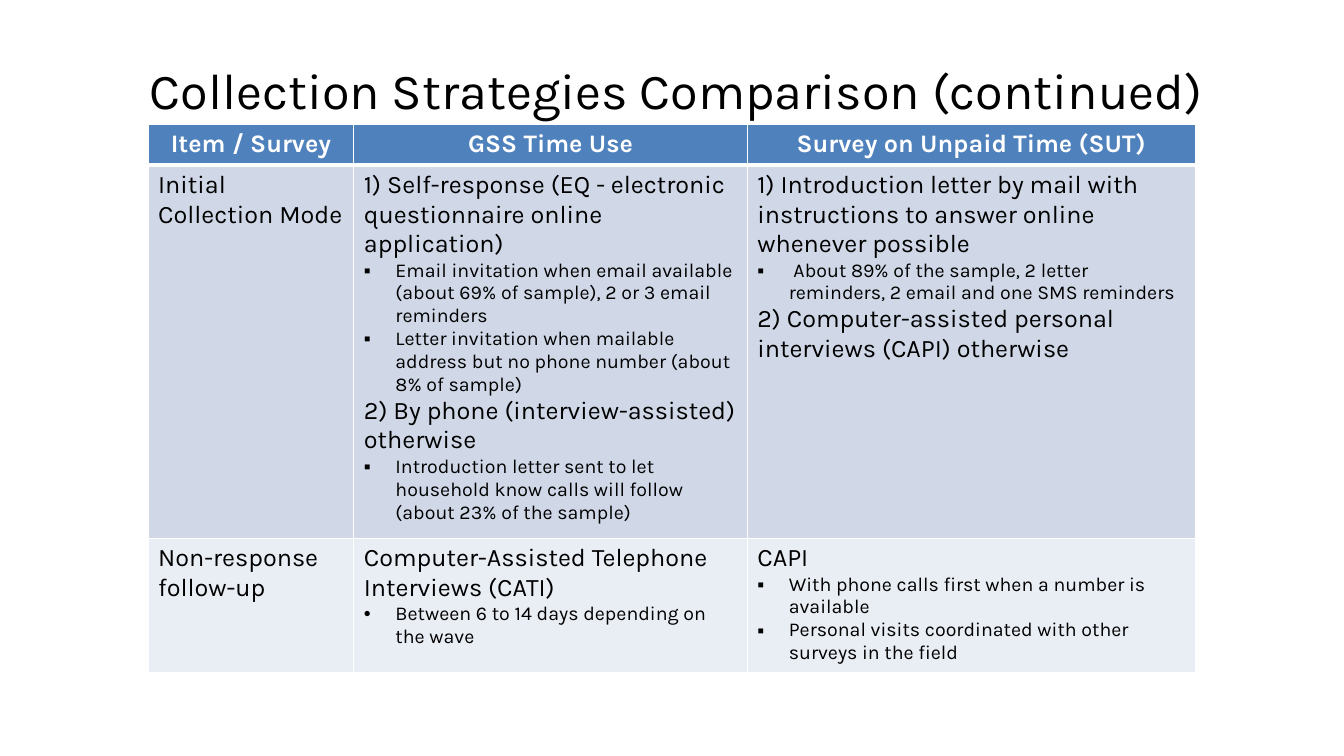
from lxml import etree
from pptx import Presentation
from pptx.dml.color import RGBColor
from pptx.enum import text
from pptx.oxml import ns
from pptx.util import Pt

FONT = "Karla"
BLACK, WHITE = "000000", "FFFFFF"
HEADER_FILL = "4F81BD"
BODY_FILLS = ("D0D8E8", "E9EDF4")
COLUMN_WIDTHS = (147, 281, 320)
ROW_HEIGHTS = (29.5, 259.5, 93.5)
BULLETS = "▪•"
BULLET_INDENT = 22.5

HEADINGS = ["Item / Survey", "GSS Time Use", "Survey on Unpaid Time (SUT)"]
# A line that starts with a bullet character becomes a bulleted paragraph.
STRATEGIES = [
    [
        ["Initial Collection Mode"],
        [
            "1) Self-response (EQ - electronic questionnaire online application)",
            "▪Email invitation when email available (about 69% of sample), 2 or 3 email reminders",
            "▪Letter invitation when mailable address but no phone number (about 8% of sample)",
            "2) By phone (interview-assisted) otherwise",
            "▪Introduction letter sent to let household know calls will follow (about 23% of the sample)",
        ],
        [
            "1) Introduction letter by mail with instructions to answer online whenever possible",
            "▪ About 89% of the sample, 2 letter reminders, 2 email and one SMS reminders",
            "2) Computer-assisted personal interviews (CAPI) otherwise",
        ],
    ],
    [
        ["Non-response follow-up"],
        [
            "Computer-Assisted Telephone Interviews (CATI)",
            "•Between 6 to 14 days depending on the wave",
        ],
        [
            "CAPI",
            "▪With phone calls first when a number is available",
            "▪Personal visits coordinated with other surveys in the field",
        ],
    ],
]


def rgb(color):
    return RGBColor.from_string(color)


def format_runs(paragraph, size, color, bold=False):
    for run in paragraph.runs:
        run.font.name = FONT
        run.font.size = Pt(size)
        run.font.bold = bold
        run.font.color.rgb = rgb(color)


def add_bullet(paragraph, character):
    properties = paragraph._p.get_or_add_pPr()
    indent = Pt(BULLET_INDENT)
    properties.set("marL", str(indent))
    properties.set("indent", str(-indent))
    etree.SubElement(properties, ns.qn("a:buFont"), typeface="Arial")
    etree.SubElement(properties, ns.qn("a:buChar"), char=character)


def set_borders(cell, top, bottom):
    """Draw white borders, 1 pt at the sides and as given above and below."""
    properties = cell._tc.get_or_add_tcPr()
    widths = {"lnL": 1, "lnR": 1, "lnT": top, "lnB": bottom}
    for position, (side, width) in enumerate(widths.items()):
        line = etree.Element(ns.qn(f"a:{side}"), w=str(Pt(width)))
        fill = etree.SubElement(line, ns.qn("a:solidFill"))
        etree.SubElement(fill, ns.qn("a:srgbClr"), val=WHITE)
        properties.insert(position, line)


def fill_cell(cell, lines, fill, header=False):
    cell.fill.solid()
    cell.fill.fore_color.rgb = rgb(fill)
    frame = cell.text_frame
    for number, line in enumerate(lines):
        paragraph = frame.add_paragraph() if number else frame.paragraphs[0]
        bulleted = line[0] in BULLETS
        if bulleted:
            add_bullet(paragraph, line[0])
        paragraph.text = line[1:] if bulleted else line
        if header:
            paragraph.alignment = text.PP_ALIGN.CENTER
        format_runs(paragraph, 14 if bulleted else 18, WHITE if header else BLACK, header)


def add_title(slide, left, top, width, height):
    frame = slide.shapes.add_textbox(Pt(left), Pt(top), Pt(width), Pt(height)).text_frame
    frame.word_wrap = True
    frame.vertical_anchor = text.MSO_ANCHOR.MIDDLE
    frame.text = "Collection Strategies Comparison (continued)"
    frame.paragraphs[0].alignment = text.PP_ALIGN.CENTER
    format_runs(frame.paragraphs[0], 36, BLACK)


def add_comparison(slide, left, top):
    comparison = slide.shapes.add_table(
        len(ROW_HEIGHTS), len(COLUMN_WIDTHS), Pt(left), Pt(top),
        Pt(sum(COLUMN_WIDTHS)), Pt(sum(ROW_HEIGHTS))).table
    for column, width in zip(comparison.columns, COLUMN_WIDTHS):
        column.width = Pt(width)
    for row, height in zip(comparison.rows, ROW_HEIGHTS):
        row.height = Pt(height)

    for index, heading in enumerate(HEADINGS):
        cell = comparison.cell(0, index)
        fill_cell(cell, [heading], HEADER_FILL, header=True)
        set_borders(cell, top=1, bottom=3)
    for row, (strategy, fill) in enumerate(zip(STRATEGIES, BODY_FILLS), start=1):
        for index, lines in enumerate(strategy):
            cell = comparison.cell(row, index)
            fill_cell(cell, lines, fill)
            set_borders(cell, top=3 if row == 1 else 1, bottom=1)


def main():
    deck = Presentation()
    deck.slide_width, deck.slide_height = Pt(960), Pt(540)
    slide = deck.slides.add_slide(deck.slide_layouts[6])
    add_title(slide, 32.4, 21.6, 901.4, 84.2)
    add_comparison(slide, 105.8, 88.6)
    deck.save("out.pptx")


if __name__ == "__main__":
    main()
